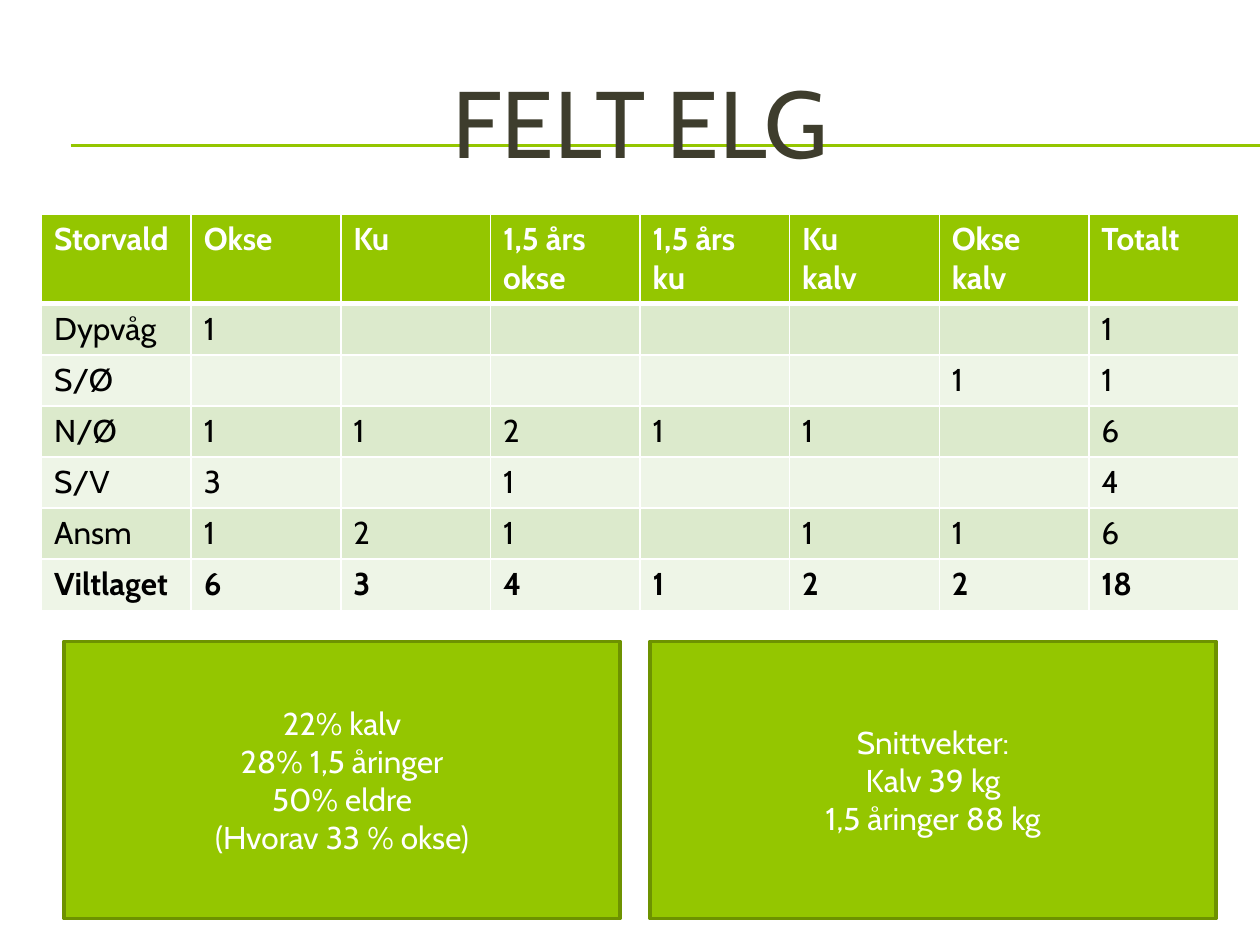
from lxml import etree
from pptx import Presentation
from pptx.dml.color import RGBColor
from pptx.enum.shapes import MSO_CONNECTOR, MSO_SHAPE
from pptx.enum.text import MSO_ANCHOR, PP_ALIGN
from pptx.oxml.ns import qn
from pptx.util import Inches, Pt

LINE, RECT = MSO_CONNECTOR.STRAIGHT, MSO_SHAPE.RECTANGLE
MID, LEFT, CENTER = MSO_ANCHOR.MIDDLE, PP_ALIGN.LEFT, PP_ALIGN.CENTER
GREEN, WHITE = "94C600", "FFFFFF"


def color(code):
    return RGBColor.from_string(code)


def write(frame, text, tint, align=CENTER, **style):
    frame.text = text
    for para in frame.paragraphs:
        para.alignment = align
        for run in para.runs:
            run.font.color.rgb = color(tint)
            for name, value in ({"name": "Cabin", "size": Pt(18), "bold": False} | style).items():
                setattr(run.font, name, value)


deck = Presentation()
deck.slide_width, deck.slide_height = Inches(10), Inches(7.5)
slide = deck.slides.add_slide(deck.slide_layouts[5])
shapes = slide.shapes

# Rules behind the title
for y in (1.15, 1.16):
    rule = shapes.add_connector(LINE, Inches(0.56), Inches(y), deck.slide_width, Inches(y))
    rule.line.color.rgb = color(GREEN)
    rule.line.width = Pt(0.75)
    etree.SubElement(rule.element.spPr, qn("a:effectLst"))

# Title, brought in front of the rules
title = shapes.title
place = {"left": 0.33, "top": 0.5, "width": 9.5, "height": 0.92}
for name, value in place.items():
    setattr(title, name, Inches(value))
title.element.getparent().append(title.element)
title.text_frame.vertical_anchor = MID
write(title.text_frame, "FELT ELG", "3E3D2D", size=Pt(54))

# Table of felled animals
rows = [
    ["Storvald", "Okse", "Ku", "1,5 års\nokse", "1,5 års\nku", "Ku\nkalv", "Okse\nkalv", "Totalt"],
    ["Dypvåg", "1", "", "", "", "", "", "1"],
    ["S/Ø", "", "", "", "", "", "1", "1"],
    ["N/Ø", "1", "1", "2", "1", "1", "", "6"],
    ["S/V", "3", "", "1", "", "", "", "4"],
    ["Ansm", "1", "2", "1", "", "1", "1", "6"],
    ["Viltlaget", "6", "3", "4", "1", "2", "2", "18"],
]
last = len(rows) - 1
table = shapes.add_table(len(rows), len(rows[0]), Inches(0.33), Inches(1.7),
                         Inches(9.5), Inches(3.13)).table
for r, row in enumerate(rows):
    head = r == 0
    table.rows[r].height = Inches(0.69 if head else 0.405)
    fill = GREEN if head else ("EEF5E7", "DCEACC")[r % 2]
    for c, text in enumerate(row):
        cell = table.cell(r, c)
        write(cell.text_frame, text, WHITE if head else "000000", LEFT, bold=r in (0, last))
        # Borders come before the fill in the cell's XML
        props = cell._tc.get_or_add_tcPr()
        for side in "LRTB":
            thick = (side == "B" and head) or (side == "T" and r == 1)
            edge = etree.SubElement(props, qn(f"a:ln{side}"), w=str(Pt(3 if thick else 1)))
            paint = etree.SubElement(edge, qn("a:solidFill"))
            etree.SubElement(paint, qn("a:srgbClr"), val=WHITE)
        cell.fill.solid()
        cell.fill.fore_color.rgb = color(fill)

# Summary boxes
boxes = [
    (0.51, 4.41, "22% kalv\n28% 1,5 åringer\n50% eldre\n(Hvorav 33 % okse)"),
    (5.16, 4.49, "Snittvekter:\nKalv 39 kg\n1,5 åringer 88 kg"),
]
for x, width, text in boxes:
    box = shapes.add_shape(RECT, Inches(x), Inches(5.09), Inches(width), Inches(2.2))
    box.shadow.inherit = False
    box.fill.solid()
    box.fill.fore_color.rgb = color(GREEN)
    box.line.color.rgb = color("6D9200")
    box.line.width = Pt(2)
    box.text_frame.vertical_anchor = MID
    write(box.text_frame, text, WHITE)

deck.save("out.pptx")
